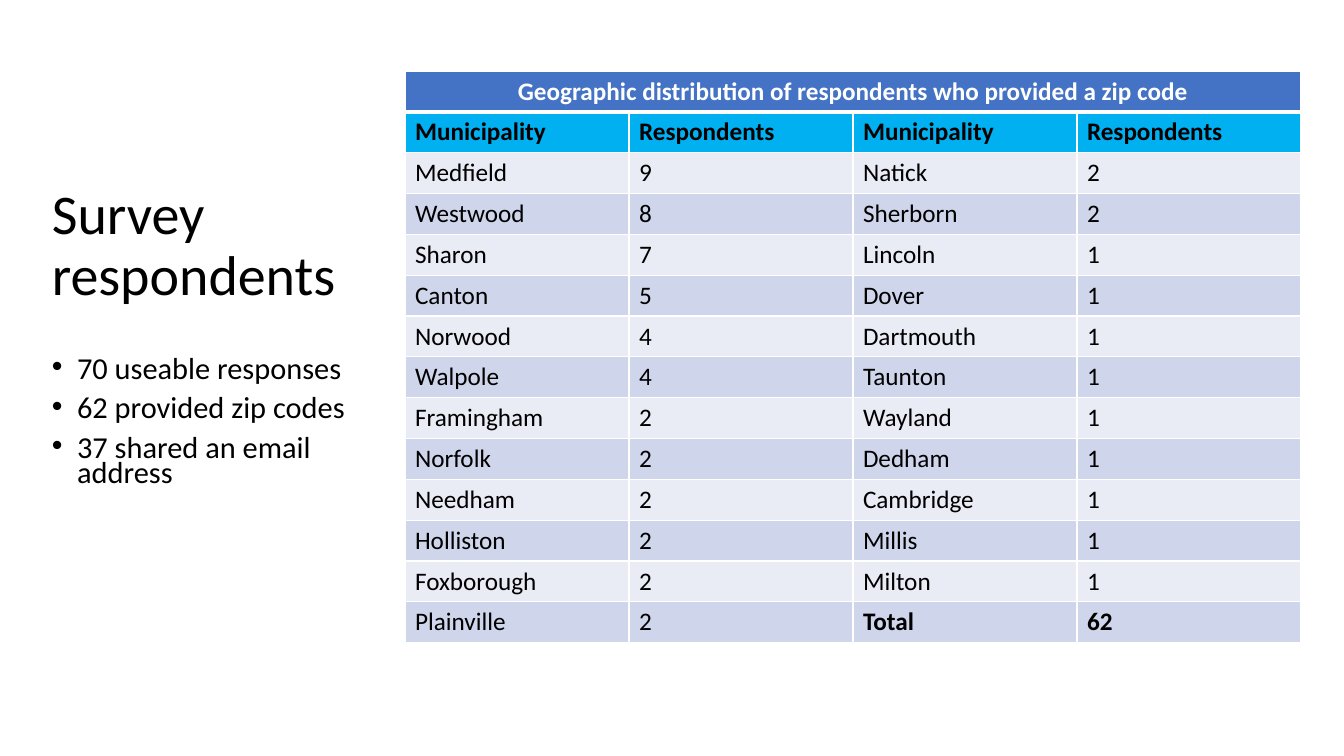
from dataclasses import dataclass

from lxml.etree import SubElement
from pptx import Presentation
from pptx.dml.color import RGBColor
from pptx.enum.text import MSO_ANCHOR as Anchor, PP_ALIGN as Align
from pptx.oxml.ns import qn
from pptx.util import Emu, Pt

EMU_PER_PX = 914400 / 100.8
FONT = "Calibri"
BLACK, WHITE = "000000", "FFFFFF"
TITLE_FILL, HEADING_FILL = "4472C4", "00B0F0"
BAND_FILLS = ("E9EBF5", "CFD5EA")
THIN, THICK = 1, 3

TABLE_TITLE = "Geographic distribution of respondents who provided a zip code"
HEADINGS = ("Municipality", "Respondents") * 2
RESPONDENTS = [
    ("Medfield", "9", "Natick", "2"),
    ("Westwood", "8", "Sherborn", "2"),
    ("Sharon", "7", "Lincoln", "1"),
    ("Canton", "5", "Dover", "1"),
    ("Norwood", "4", "Dartmouth", "1"),
    ("Walpole", "4", "Taunton", "1"),
    ("Framingham", "2", "Wayland", "1"),
    ("Norfolk", "2", "Dedham", "1"),
    ("Needham", "2", "Cambridge", "1"),
    ("Holliston", "2", "Millis", "1"),
    ("Foxborough", "2", "Milton", "1"),
    ("Plainville", "2", "Total", "62"),
]
FINDINGS = ("70 useable responses", "62 provided zip codes", "37 shared an email address")


@dataclass(frozen=True)
class Area:
    left: int
    top: int
    width: int
    height: int

    def emu(self) -> tuple:
        return tuple(px(n) for n in (self.left, self.top, self.width, self.height))


@dataclass(frozen=True)
class TextStyle:
    size: float
    color: str = BLACK
    bold: bool = False


@dataclass(frozen=True)
class TableRow:
    texts: tuple
    fill: str
    color: str = BLACK
    bold_columns: tuple = ()
    top_border: int = THIN
    bottom_border: int = THIN


def px(length: int) -> Emu:
    return Emu(round(length * EMU_PER_PX))


def rgb(color: str) -> RGBColor:
    return RGBColor.from_string(color)


def add_span(para, text: str, style: TextStyle) -> None:
    span = para.add_run()
    span.text = text
    font = span.font
    font.name, font.size, font.bold = FONT, Pt(style.size), style.bold
    font.color.rgb = rgb(style.color)


def add_text(page, area: Area, texts: tuple, style: TextStyle, line_spacing: float,
             anchor: Anchor = Anchor.TOP, bulleted: bool = False) -> None:
    frame = page.shapes.add_textbox(*area.emu()).text_frame
    frame.word_wrap = True
    frame.vertical_anchor = anchor
    for index, text in enumerate(texts):
        para = frame.add_paragraph() if index else frame.paragraphs[0]
        para.line_spacing = line_spacing
        if bulleted:
            para.space_before = Pt(10)
            add_bullet(para)
        add_span(para, text, style)


def add_bullet(para) -> None:
    properties = para._p.get_or_add_pPr()
    indent = Pt(18)
    properties.set("marL", str(indent))
    properties.set("indent", str(-indent))
    SubElement(properties, qn("a:buFont"), typeface="Arial")
    SubElement(properties, qn("a:buChar"), char="•")


def add_borders(cell, top: int, bottom: int) -> None:
    properties = cell._tc.get_or_add_tcPr()
    for side, points in (("L", THIN), ("R", THIN), ("T", top), ("B", bottom)):
        line = SubElement(properties, qn(f"a:ln{side}"), w=str(Pt(points)))
        SubElement(SubElement(line, qn("a:solidFill")), qn("a:srgbClr"), val=WHITE)


def add_table(page, area: Area, rows: list) -> None:
    columns = len(HEADINGS)
    table = page.shapes.add_table(len(rows), columns, *area.emu()).table
    for row_index, row in enumerate(rows):
        for column in range(columns):
            cell = table.cell(row_index, column)
            add_borders(cell, row.top_border, row.bottom_border)
            cell.fill.solid()
            cell.fill.fore_color.rgb = rgb(row.fill)
        for column, text in enumerate(row.texts):
            style = TextStyle(18, row.color, column in row.bold_columns)
            add_span(table.cell(row_index, column).text_frame.paragraphs[0], text, style)
    title_cell = table.cell(0, 0)
    title_cell.merge(table.cell(0, columns - 1))
    title_cell.text_frame.paragraphs[0].alignment = Align.CENTER


def table_rows() -> list:
    rows = [
        TableRow((TABLE_TITLE,), TITLE_FILL, WHITE, (0,), bottom_border=THICK),
        TableRow(HEADINGS, HEADING_FILL, bold_columns=(0, 1, 2, 3), top_border=THICK),
    ]
    for index, texts in enumerate(RESPONDENTS):
        bold_columns = (2, 3) if "Total" in texts else ()
        rows.append(TableRow(texts, BAND_FILLS[index % 2], bold_columns=bold_columns))
    return rows


def main() -> None:
    deck = Presentation()
    deck.slide_width, deck.slide_height = px(1344), px(756)
    page = deck.slides.add_slide(deck.slide_layouts[6])
    add_text(page, Area(42, 174, 314, 146), ("Survey respondents",), TextStyle(40), 0.9,
             anchor=Anchor.MIDDLE)
    add_text(page, Area(42, 354, 314, 184), FINDINGS, TextStyle(21.7), 0.7, bulleted=True)
    add_table(page, Area(405, 71, 896, 572), table_rows())
    deck.save("out.pptx")


if __name__ == "__main__":
    main()
